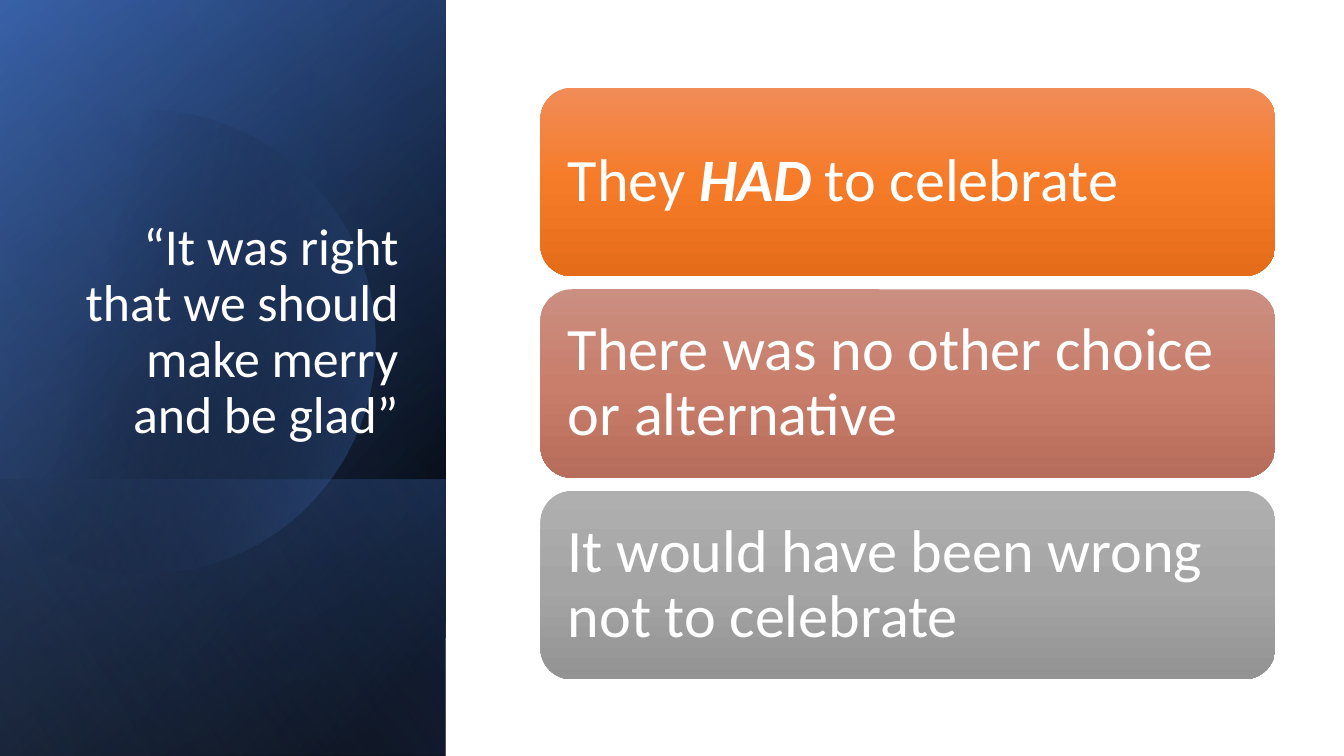
from math import acos, cos, degrees, radians, sin

from pptx import Presentation
from pptx.dml.color import RGBColor
from pptx.enum.shapes import MSO_SHAPE as Preset
from pptx.enum.text import MSO_ANCHOR as Anchor, PP_ALIGN as Align
from pptx.oxml import parse_xml
from pptx.oxml.ns import nsdecls

PX = 9144
WIDTH, HEIGHT = 1333, 750
PANEL_WIDTH = 442

BLACK = RGBColor(0x00, 0x00, 0x00)
WHITE = RGBColor(0xFF, 0xFF, 0xFF)
NAVY = RGBColor(0x2F, 0x55, 0x97)
BLUE = RGBColor(0x44, 0x72, 0xC4)
PALE_BLUE = RGBColor(0x8F, 0xAA, 0xDC)
ORANGE = (RGBColor(0xF1, 0x8C, 0x57), RGBColor(0xF6, 0x7B, 0x28), RGBColor(0xE5, 0x6C, 0x19))
ROSE = (RGBColor(0xCB, 0x8F, 0x81), RGBColor(0xC9, 0x7E, 0x6B), RGBColor(0xB7, 0x6D, 0x5B))
GRAY = (RGBColor(0xAF, 0xAF, 0xAF), RGBColor(0xA5, 0xA5, 0xA5), RGBColor(0x93, 0x93, 0x93))


class SlideBuilder:
    font = {"name": "Calibri", "bold": False, "italic": False}

    def __init__(self, presentation):
        self.slide = presentation.slides.add_slide(presentation.slide_layouts[6])

    def gradient(self, shape, stops, angle):
        shape.shadow.inherit = False
        shape.line.fill.background()
        shape.fill.background()
        stop_xml = "".join(
            f'<a:gs pos="{position * 1000}"><a:srgbClr val="{color}">'
            f'<a:alpha val="{alpha * 1000}"/></a:srgbClr></a:gs>'
            for position, color, alpha in stops
        )
        gradient = parse_xml(
            f'<a:gradFill {nsdecls("a")} rotWithShape="1"><a:gsLst>{stop_xml}</a:gsLst>'
            f'<a:lin ang="{angle * 60000}" scaled="0"/></a:gradFill>'
        )
        properties = shape._element.spPr
        properties.replace(properties.find("{*}noFill"), gradient)

    def panel(self, top, height, stops, angle):
        left = (PANEL_WIDTH - height) // 2
        shape = self.slide.shapes.add_shape(
            Preset.RECTANGLE, left * PX, (top - left) * PX, height * PX, PANEL_WIDTH * PX
        )
        shape.rotation = 90
        shape._element.spPr.xfrm.set("flipH", "1")
        self.gradient(shape, stops, angle)

    def cut_disc(self, center_x, center_y, radius, stops, angle):
        limit = degrees(acos(-center_x / radius))
        steps = 80
        turns = [radians(limit * (2 * step / steps - 1)) for step in range(steps + 1)]
        points = [
            (round((center_x + radius * cos(turn)) * PX), round((center_y + radius * sin(turn)) * PX))
            for turn in turns
        ]
        builder = self.slide.shapes.build_freeform(*points[0])
        builder.add_line_segments(points[1:], close=True)
        self.gradient(builder.convert_to_shape(), stops, angle)

    def add_text(self, shape, runs, size, align, frame_format):
        frame = shape.text_frame
        for name, value in {"word_wrap": True, **frame_format}.items():
            setattr(frame, name, value)
        paragraph = frame.paragraphs[0]
        paragraph.alignment = align
        paragraph.line_spacing = 0.9
        for text, emphasis in runs:
            run = paragraph.add_run()
            run.text = text
            run.font.color.rgb = WHITE
            for name, value in {**self.font, "size": size * 12700, **emphasis}.items():
                setattr(run.font, name, value)

    def title(self, left, top, width, height, text):
        box = self.slide.shapes.add_textbox(left * PX, top * PX, width * PX, height * PX)
        self.add_text(box, [(text, {})], 37, Align.RIGHT, {"vertical_anchor": Anchor.BOTTOM})

    def card(self, left, top, width, height, colors, runs):
        shape = self.slide.shapes.add_shape(
            Preset.ROUNDED_RECTANGLE, left * PX, top * PX, width * PX, height * PX
        )
        self.gradient(shape, [(50 * index, color, 100) for index, color in enumerate(colors)], 90)
        margins = {f"margin_{side}": 18 * PX for side in ("left", "top", "right", "bottom")}
        self.add_text(shape, runs, 43, Align.LEFT, {"vertical_anchor": Anchor.MIDDLE, **margins})


def main():
    presentation = Presentation()
    presentation.slide_width = WIDTH * PX
    presentation.slide_height = HEIGHT * PX
    builder = SlideBuilder(presentation)

    builder.panel(0, HEIGHT, [(8, BLACK, 100), (100, NAVY, 100)], 50)
    builder.panel(0, HEIGHT, [(0, BLACK, 0), (99, BLUE, 46)], 30)
    builder.panel(476, 274, [(2, BLUE, 29), (100, BLACK, 30)], 130)
    builder.cut_disc(142, 339, 230, [(29, BLACK, 0), (100, BLUE, 43)], 14)
    builder.panel(0, HEIGHT, [(0, BLACK, 0), (99, PALE_BLUE, 11)], 120)

    builder.title(64, 184, 341, 262, "“It was right that we should make merry and be glad”")

    cards = [
        (ORANGE, [("They ", {}), ("HAD", {"bold": True, "italic": True}), (" to celebrate", {})]),
        (ROSE, [("There was no other choice or alternative", {})]),
        (GRAY, [("It would have been wrong not to celebrate", {})]),
    ]
    for index, (colors, runs) in enumerate(cards):
        builder.card(536, 87 + 200 * index, 729, 187, colors, runs)

    presentation.save("out.pptx")


if __name__ == "__main__":
    main()
